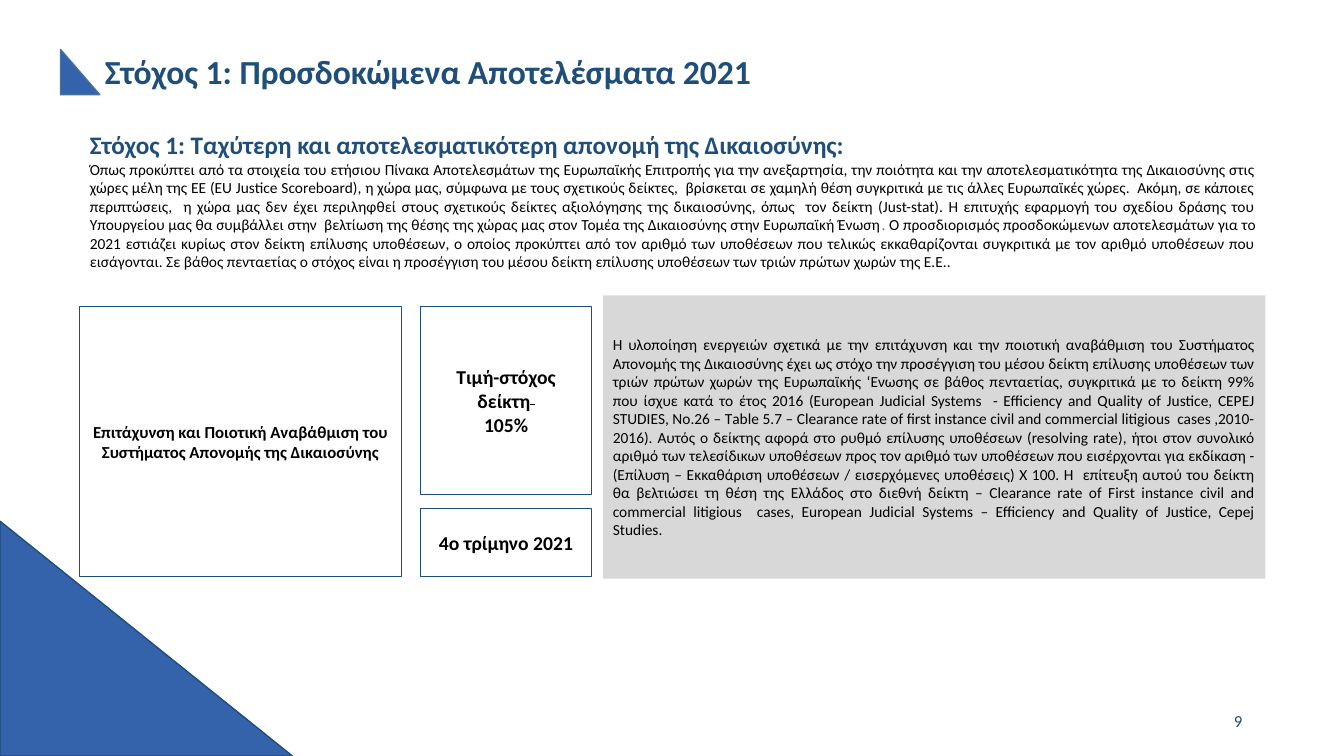
import pptx
import pptx.util
from pptx.dml.color import RGBColor
from pptx.enum.shapes import MSO_SHAPE
from pptx.enum.text import MSO_ANCHOR, MSO_AUTO_SIZE, PP_ALIGN

NAVY, BLUE, STEEL, GREY = "1E4E79", "3462AB", "43739E", "D8D8D8"
BLACK, GREEN = "000000", "548135"
LEFT, CENTER, RIGHT, JUSTIFY = PP_ALIGN.LEFT, PP_ALIGN.CENTER, PP_ALIGN.RIGHT, PP_ALIGN.JUSTIFY

# Each text is a list of paragraphs, each paragraph a list of (text, run format).
TITLE = [[("Στόχος 1: Προσδοκώμενα Αποτελέσματα 2021", {})]]
INTRO = [
    [("Στόχος 1: Ταχύτερη και αποτελεσματικότερη απονομή της Δικαιοσύνης:",
      {"size": 18, "color": NAVY, "bold": True})],
    [("Όπως προκύπτει από τα στοιχεία του ετήσιου Πίνακα Αποτελεσμάτων της Ευρωπαϊκής Επιτροπής "
      "για την ανεξαρτησία, την ποιότητα και την αποτελεσματικότητα της Δικαιοσύνης στις χώρες μέλη "
      "της ΕΕ (EU Justice Scoreboard), η χώρα μας, σύμφωνα με τους σχετικούς δείκτες,  βρίσκεται σε "
      "χαμηλή θέση συγκριτικά με τις άλλες Ευρωπαϊκές χώρες.  ", {}),
     ("Ακόμη, σε κάποιες περιπτώσεις,  η χώρα "
      "μας δεν έχει περιληφθεί στους σχετικούς δείκτες αξιολόγησης της δικαιοσύνης, όπως  τον δείκτη "
      "(Just-stat). Η επιτυχής εφαρμογή του σχεδίου δράσης του Υπουργείου μας θα συμβάλλει στην  "
      "βελτίωση της θέσης της χώρας μας στον Τομέα της Δικαιοσύνης στην Ευρωπαϊκή Ένωση", {}),
     (". ", {"color": GREEN}),
     ("Ο προσδιορισμός προσδοκώμενων αποτελεσμάτων για το 2021 εστιάζει κυρίως στον δείκτη επίλυσης "
      "υποθέσεων, ο οποίος προκύπτει από τον αριθμό των υποθέσεων που τελικώς εκκαθαρίζονται "
      "συγκριτικά με τον αριθμό υποθέσεων που εισάγονται. Σε βάθος πενταετίας ο στόχος είναι η "
      "προσέγγιση του μέσου δείκτη επίλυσης υποθέσεων των τριών πρώτων χωρών της Ε.Ε..", {})],
]
ACTION = [[("Επιτάχυνση και Ποιοτική Αναβάθμιση του Συστήματος Απονομής της Δικαιοσύνης", {})]]
TARGET = [[("Τιμή-στόχος δείκτη", {}), (" ", {"strike": True})], [("105%", {})]]
DEADLINE = [[("4ο τρίμηνο 2021", {})]]
DETAILS = [[
    ("Η υλοποίηση ενεργειών σχετικά με την επιτάχυνση και την ποιοτική αναβάθμιση του Συστήματος "
     "Απονομής της Δικαιοσύνης έχει ως στόχο την προσέγγιση του μέσου δείκτη επίλυσης υποθέσεων των "
     "τριών πρώτων χωρών της Ευρωπαϊκής ‘Ενωσης σε βάθος πενταετίας, συγκριτικά με το δείκτη 99% που "
     "ίσχυε κατά το έτος 2016 (European Judicial Systems  - Efficiency and Quality of Justice, CEPEJ "
     "STUDIES, No.26 – Τable 5.7 – Clearance rate of first instance civil and commercial litigious  "
     "cases ,2010-2016). ", {}),
    ("Αυτός ο δείκτης αφορά στο ρυθμό επίλυσης υποθέσεων (resolving rate), ήτοι "
     "στον συνολικό αριθμό των τελεσίδικων υποθέσεων προς τον αριθμό των υποθέσεων που εισέρχονται για "
     "εκδίκαση - (Επίλυση – Εκκαθάριση υποθέσεων / εισερχόμενες υποθέσεις) X 100. H  επίτευξη αυτού "
     "του δείκτη θα βελτιώσει τη θέση της Ελλάδος στο διεθνή δείκτη – Clearance rate of First instance "
     "civil and commercial litigious  cases, European Judicial Systems – Efficiency and Quality of "
     "Justice, Cepej Studies.", {}),
]]
PAGE_NUMBER = [[("9", {})]]

WIDTH, HEIGHT = 13.33, 7.5
MARGIN = 0.79
ROW_TOP, ROW_BOTTOM = 3.04, 5.72
ACTION_WIDTH = 3.19
TARGET_LEFT, TARGET_WIDTH, TARGET_HEIGHT = 4.17, 1.7, 1.87
ROW_GAP = 0.13
DEADLINE_TOP = ROW_TOP + TARGET_HEIGHT + ROW_GAP
CORNER_HEIGHT = 2.33


def rgb(color):
    return RGBColor.from_string(color)


def place(shape, left, top, width, height):
    shape.left, shape.top, shape.width, shape.height = (
        pptx.util.Inches(length) for length in (left, top, width, height))


def write(shape, paragraphs, size=11, color=BLACK, bold=False, align=LEFT, spacing=1.0, bottom=0.05):
    frame = shape.text_frame
    frame.word_wrap = True
    frame.auto_size = MSO_AUTO_SIZE.NONE
    frame.vertical_anchor = MSO_ANCHOR.MIDDLE
    frame.margin_left = frame.margin_right = pptx.util.Inches(0.1)
    frame.margin_top, frame.margin_bottom = pptx.util.Inches(0.05), pptx.util.Inches(bottom)
    for number, spans in enumerate(paragraphs):
        para = frame.add_paragraph() if number else frame.paragraphs[0]
        properties = para._p.get_or_add_pPr()
        properties.set("marL", "0")
        properties.set("indent", "0")
        properties.append(pptx.oxml.parse_xml(
            '<a:buNone xmlns:a="http://schemas.openxmlformats.org/drawingml/2006/main"/>'))
        para.alignment, para.line_spacing = align, spacing
        para.space_before = para.space_after = pptx.util.Pt(0)
        for text, style in spans:
            span = para.add_run()
            span.text = text
            span.font.name = "Calibri"
            span.font.size = pptx.util.Pt(style.get("size", size))
            span.font.bold = style.get("bold", bold)
            span.font.color.rgb = rgb(style.get("color", color))
            if style.get("strike"):
                span.font._element.set("strike", "sngStrike")


def add_figure(page, kind, area, fill=None, line=None, line_width=0.75):
    shape = page.shapes.add_shape(kind, 0, 0, 0, 0)
    place(shape, *area)
    shape.shadow.inherit = False
    if fill:
        shape.fill.solid()
        shape.fill.fore_color.rgb = rgb(fill)
    else:
        shape.fill.background()
    if line:
        shape.line.color.rgb = rgb(line)
        shape.line.width = pptx.util.Pt(line_width)
    else:
        shape.line.fill.background()
    return shape


def main():
    deck = pptx.Presentation()
    deck.slide_width, deck.slide_height = pptx.util.Inches(WIDTH), pptx.util.Inches(HEIGHT)
    page = deck.slides.add_slide(deck.slide_layouts[1])
    title, intro = page.placeholders

    place(title, 0.94, 0.44, 11.5, 0.58)
    write(title, TITLE, size=24, color=NAVY, bold=True, spacing=0.9)
    place(intro, MARGIN, 1.37, 11.77, 1.42)
    write(intro, INTRO, align=JUSTIFY, bottom=0.24)

    add_figure(page, MSO_SHAPE.RIGHT_TRIANGLE, (0, HEIGHT - CORNER_HEIGHT, 2.9, CORNER_HEIGHT),
               fill=BLUE, line=NAVY, line_width=1)
    add_figure(page, MSO_SHAPE.RIGHT_TRIANGLE, (0.6, 0.49, 0.39, 0.45),
               fill=BLUE, line=STEEL, line_width=1)

    outlined = [
        (ACTION, 12, (MARGIN, ROW_TOP, ACTION_WIDTH, ROW_BOTTOM - ROW_TOP)),
        (TARGET, 14, (TARGET_LEFT, ROW_TOP, TARGET_WIDTH, TARGET_HEIGHT)),
        (DEADLINE, 14, (TARGET_LEFT, DEADLINE_TOP, TARGET_WIDTH, ROW_BOTTOM - DEADLINE_TOP)),
    ]
    for text, size, area in outlined:
        box = add_figure(page, MSO_SHAPE.RECTANGLE, area, line=NAVY)
        write(box, text, size=size, bold=True, align=CENTER)

    details = add_figure(page, MSO_SHAPE.RECTANGLE, (5.98, 2.93, 6.57, 2.81), fill=GREY)
    write(details, DETAILS, align=JUSTIFY)

    number = page.shapes.add_textbox(0, 0, 0, 0)
    place(number, 9.42, 6.95, 3, 0.4)
    write(number, PAGE_NUMBER, size=12, color=NAVY, align=RIGHT)
    deck.save("out.pptx")


if __name__ == "__main__":
    main()
